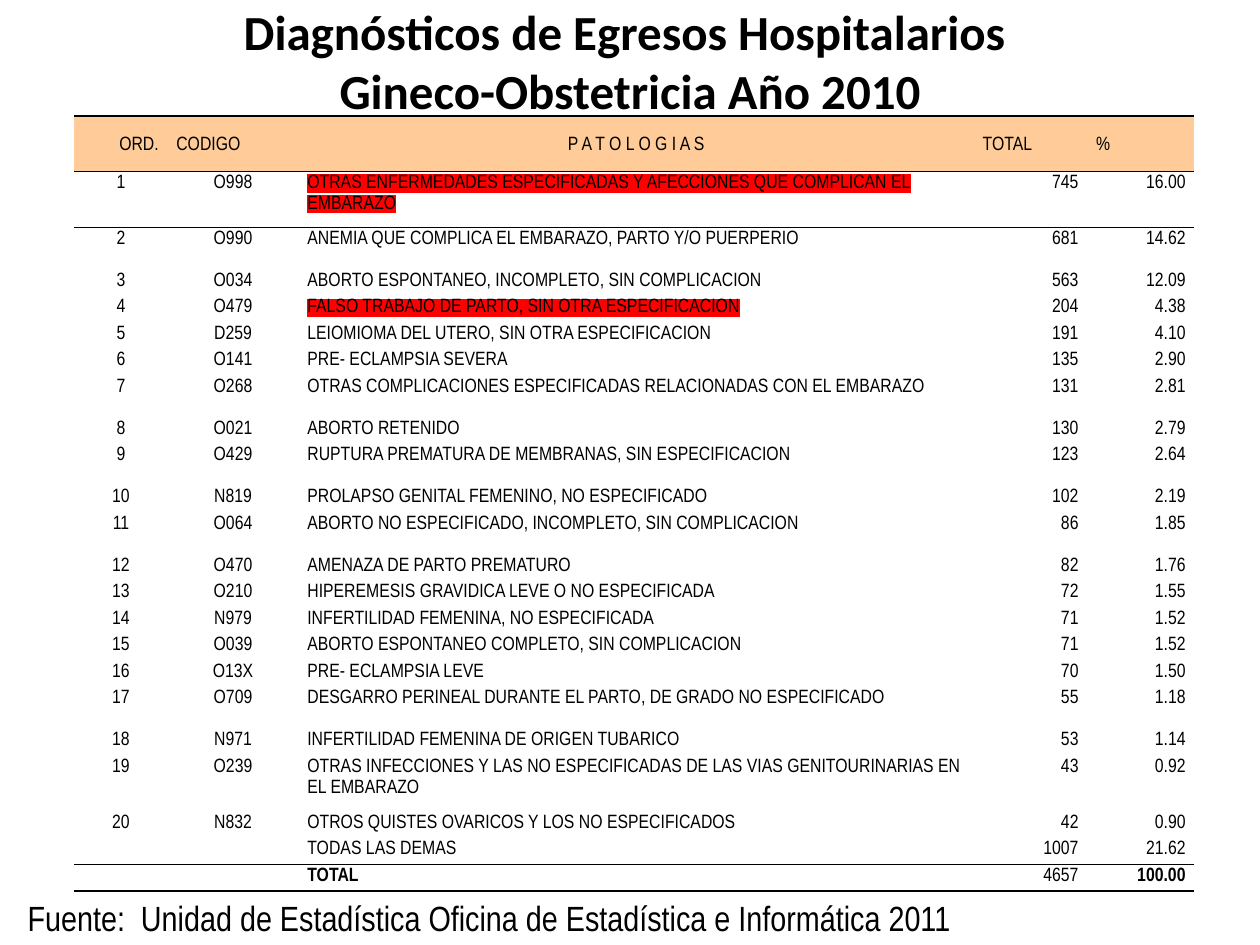
from lxml.etree import SubElement
from pptx import Presentation
from pptx.dml.color import RGBColor
from pptx.enum.text import MSO_ANCHOR as ANCHOR, PP_ALIGN as ALIGN
from pptx.oxml import parse_xml
from pptx.oxml.ns import nsdecls, qn
from pptx.util import Inches, Pt

BLACK, WHITE, PEACH, RED = "000000", "FFFFFF", "FFCC99", "FF0000"
NARROW = "Arial Narrow"
NO_STYLE = "{2D5ABB26-0587-4C30-8999-92F81FD0307C}"

TITLE = "Diagnósticos de Egresos Hospitalarios \vGineco-Obstetricia Año 2010"
SOURCE = "Fuente:  Unidad de Estadística Oficina de Estadística e Informática 2011"
HEADERS = ["ORD.", "CODIGO", "P A T O L O G I A S", "TOTAL", "%"]
DIAGNOSES = [
    ("O998", "OTRAS ENFERMEDADES ESPECIFICADAS Y AFECCIONES QUE COMPLICAN EL EMBARAZO", "745", "16.00"),
    ("O990", "ANEMIA QUE COMPLICA EL EMBARAZO, PARTO Y/O PUERPERIO", "681", "14.62"),
    ("O034", "ABORTO ESPONTANEO, INCOMPLETO, SIN COMPLICACION", "563", "12.09"),
    ("O479", "FALSO TRABAJO DE PARTO, SIN OTRA ESPECIFICACION", "204", "4.38"),
    ("D259", "LEIOMIOMA DEL UTERO, SIN OTRA ESPECIFICACION", "191", "4.10"),
    ("O141", "PRE- ECLAMPSIA SEVERA", "135", "2.90"),
    ("O268", "OTRAS COMPLICACIONES ESPECIFICADAS RELACIONADAS CON EL EMBARAZO", "131", "2.81"),
    ("O021", "ABORTO RETENIDO", "130", "2.79"),
    ("O429", "RUPTURA PREMATURA DE MEMBRANAS, SIN ESPECIFICACION", "123", "2.64"),
    ("N819", "PROLAPSO GENITAL FEMENINO, NO ESPECIFICADO", "102", "2.19"),
    ("O064", "ABORTO NO ESPECIFICADO, INCOMPLETO, SIN COMPLICACION", "86", "1.85"),
    ("O470", "AMENAZA DE PARTO PREMATURO", "82", "1.76"),
    ("O210", "HIPEREMESIS GRAVIDICA LEVE O NO ESPECIFICADA", "72", "1.55"),
    ("N979", "INFERTILIDAD FEMENINA, NO ESPECIFICADA", "71", "1.52"),
    ("O039", "ABORTO ESPONTANEO COMPLETO, SIN COMPLICACION", "71", "1.52"),
    ("O13X", "PRE- ECLAMPSIA LEVE", "70", "1.50"),
    ("O709", "DESGARRO PERINEAL DURANTE EL PARTO, DE GRADO NO ESPECIFICADO", "55", "1.18"),
    ("N971", "INFERTILIDAD FEMENINA DE ORIGEN TUBARICO", "53", "1.14"),
    ("O239", "OTRAS INFECCIONES Y LAS NO ESPECIFICADAS DE LAS VIAS GENITOURINARIAS EN EL EMBARAZO", "43", "0.92"),
    ("N832", "OTROS QUISTES OVARICOS Y LOS NO ESPECIFICADOS", "42", "0.90"),
]
SUMMARY = [
    ("", "", "TODAS LAS DEMAS", "1007", "21.62"),
    ("", "", "TOTAL", "4657", "100.00"),
]
ROWS = [HEADERS, *((str(n), *d) for n, d in enumerate(DIAGNOSES, 1)), *SUMMARY]
LAST = len(ROWS) - 1

COL_WIDTHS = [0.74, 1.04, 5.36, 0.9, 0.85]
TALL, MEDIUM, SHORT = 0.44, 0.33, 0.21
ROW_HEIGHTS = {0: TALL, 1: TALL, 19: TALL, **dict.fromkeys((2, 7, 9, 11, 17), MEDIUM)}
HEAD_ALIGN = [ALIGN.RIGHT, ALIGN.LEFT, ALIGN.CENTER, ALIGN.LEFT, ALIGN.LEFT]
BODY_ALIGN = [ALIGN.CENTER, ALIGN.CENTER, ALIGN.LEFT, ALIGN.RIGHT, ALIGN.RIGHT]
HIGHLIGHTED = {(1, 2), (4, 2)}
BOLD = {(LAST, 2), (LAST, 4)}
RULED_TOP = {0, 1, LAST}
RULED_BOTTOM = {0, LAST - 1, LAST}


def rgb(value):
    return RGBColor.from_string(value)


def style(p, font, size, align=ALIGN.LEFT, bold=False):
    p.alignment = align
    p.font.name = font
    p.font.size = Pt(size)
    p.font.bold = bold
    p.font.color.rgb = rgb(BLACK)


def add_text(slide, box, text, font, size, align=ALIGN.LEFT, bold=False):
    tf = slide.shapes.add_textbox(*map(Inches, box)).text_frame
    p = tf.paragraphs[0]
    p.text = text
    style(p, font, size, align, bold)
    return tf


def add_title(slide, box):
    tf = add_text(slide, box, TITLE, "Calibri", 28, ALIGN.CENTER, True)
    tf.word_wrap = True
    tf.vertical_anchor = ANCHOR.BOTTOM
    tf.margin_bottom = Inches(0.12)


def add_source(slide, box):
    tf = add_text(slide, box, SOURCE, NARROW, 20)
    tf.word_wrap = False
    tf.vertical_anchor = ANCHOR.MIDDLE


def set_border(cell, side):
    line = parse_xml(
        f'<a:{side} {nsdecls("a")} w="{Pt(1)}"><a:solidFill>'
        f'<a:srgbClr val="{BLACK}"/></a:solidFill></a:{side}>'
    )
    cell._tc.get_or_add_tcPr().insert(0, line)


def highlight(r, color):
    mark = SubElement(r._r.get_or_add_rPr(), qn("a:highlight"))
    SubElement(mark, qn("a:srgbClr")).set("val", color)


def fill_cell(cell, row, col, text):
    cell.margin_left = cell.margin_right = Inches(0.07)
    cell.margin_top = cell.margin_bottom = 0
    cell.vertical_anchor = ANCHOR.TOP if row else ANCHOR.MIDDLE
    cell.fill.solid()
    cell.fill.fore_color.rgb = rgb(WHITE if row else PEACH)
    p = cell.text_frame.paragraphs[0]
    p.line_spacing = 1.15
    style(p, NARROW, 11, (BODY_ALIGN if row else HEAD_ALIGN)[col], (row, col) in BOLD)
    if text:
        r = p.add_run()
        r.text = text
        if (row, col) in HIGHLIGHTED:
            highlight(r, RED)
    else:
        SubElement(p._p, qn("a:endParaRPr")).set("sz", "1100")
    if row in RULED_BOTTOM:
        set_border(cell, "lnB")
    if row in RULED_TOP:
        set_border(cell, "lnT")


def add_diagnosis_table(slide, box):
    frame = slide.shapes.add_table(len(ROWS), len(HEADERS), *map(Inches, box))
    table = frame.table
    table.first_row = table.horz_banding = False
    table._tbl.tblPr.find(qn("a:tableStyleId")).text = NO_STYLE
    for column, width in zip(table.columns, COL_WIDTHS):
        column.width = Inches(width)
    heights = [ROW_HEIGHTS.get(i, SHORT) for i in range(len(ROWS))]
    scale = box[3] / sum(heights)
    for i, values in enumerate(ROWS):
        table.rows[i].height = Inches(heights[i] * scale)
        for j, text in enumerate(values):
            fill_cell(table.cell(i, j), i, j, text)


def main():
    prs = Presentation()
    prs.slide_width, prs.slide_height = Inches(10), Inches(7.5)
    slide = prs.slides.add_slide(prs.slide_layouts[6])
    add_title(slide, (0.5, 0.3, 9, 0.77))
    add_diagnosis_table(slide, (0.59, 0.92, 8.9, 6.16))
    add_source(slide, (0.12, 7.06, 7.58, 0.44))
    prs.save("out.pptx")


if __name__ == "__main__":
    main()
